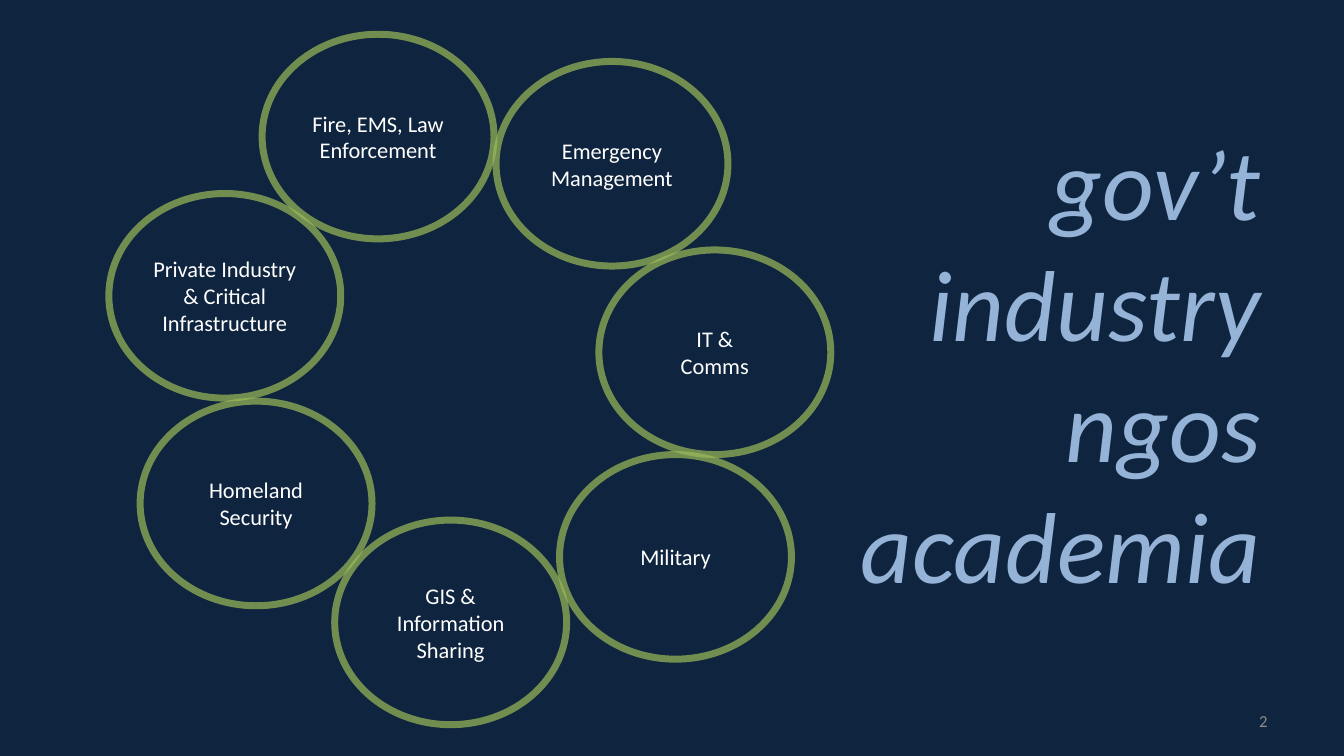
from dataclasses import dataclass

import pptx
import pptx.dml.color
import pptx.enum.shapes
import pptx.enum.text
import pptx.oxml
import pptx.oxml.ns
import pptx.util

Inches = pptx.util.Inches
ALIGN = pptx.enum.text.PP_ALIGN
ANCHOR = pptx.enum.text.MSO_ANCHOR


@dataclass(frozen=True)
class Theme:
    font: str = "Calibri"
    background: str = "0F243E"
    ring: str = "9BBB59"
    label: str = "FFFFFF"
    accent: str = "95B3D7"
    muted: str = "8C8C8C"
    label_size: int = 16
    accent_size: int = 72
    number_size: int = 12
    ring_width: int = 5
    ring_opacity: int = 70


class SlideBuilder:
    """Draws themed elements on one slide."""

    def __init__(self, prs, theme):
        self.theme = theme
        self.s = prs.slides.add_slide(prs.slide_layouts[6])
        fill = self.s.background.fill
        fill.solid()
        fill.fore_color.rgb = self.rgb(theme.background)

    def rgb(self, color):
        return pptx.dml.color.RGBColor.from_string(color)

    def set_text(self, sp, lines, size, color, align, anchor, italic=None):
        tf = sp.text_frame
        tf.word_wrap = True
        tf.vertical_anchor = anchor
        tf.text = "\n".join(lines)
        for p in tf.paragraphs:
            p.alignment = align
            p.font.name = self.theme.font
            p.font.size = pptx.util.Pt(size)
            p.font.color.rgb = self.rgb(color)
            p.font.italic = italic

    def text(self, box, lines, size, color, anchor, italic=None):
        sp = self.s.shapes.add_textbox(*map(Inches, box))
        self.set_text(sp, lines, size, color, ALIGN.RIGHT, anchor, italic)

    def ring(self, left, top, width, height, lines):
        theme = self.theme
        sp = self.s.shapes.add_shape(
            pptx.enum.shapes.MSO_SHAPE.OVAL, *map(Inches, (left, top, width, height)))
        sp.shadow.inherit = False
        sp.fill.background()
        sp.line.width = pptx.util.Pt(theme.ring_width)
        sp.line.color.rgb = self.rgb(theme.ring)
        color = sp.element.spPr.find(".//" + pptx.oxml.ns.qn("a:srgbClr"))
        alpha = pptx.oxml.parse_xml(
            f'<a:alpha {pptx.oxml.ns.nsdecls("a")} val="{theme.ring_opacity * 1000}"/>')
        color.append(alpha)
        self.set_text(sp, lines, theme.label_size, theme.label, ALIGN.CENTER, ANCHOR.MIDDLE)


RING_SIZE = (2.3, 2.03)
PARTNERS = [
    (2.6, 0.34, ["Fire, EMS, Law Enforcement"]),
    (4.92, 0.61, ["Emergency Management"]),
    (3.32, 5.16, ["GIS & Information Sharing"]),
    (5.94, 2.48, ["IT &", "Comms"]),
    (5.55, 4.51, ["Military"]),
    (1.39, 3.98, ["Homeland Security"]),
    (1.08, 1.92, ["Private Industry & Critical Infrastructure"]),
]
SECTORS = ["gov’t", "industry", "ngos", "academia"]


def main():
    prs = pptx.Presentation()
    prs.slide_width, prs.slide_height = Inches(13.33), Inches(7.5)
    theme = Theme()
    slide = SlideBuilder(prs, theme)
    slide.text((9.56, 6.95, 3.11, 0.4), ["2"], theme.number_size, theme.muted, ANCHOR.MIDDLE)
    for left, top, lines in PARTNERS:
        slide.ring(left, top, *RING_SIZE, lines)
    slide.text((6.43, 1.14, 6.17, 4.95), SECTORS, theme.accent_size, theme.accent,
               ANCHOR.TOP, italic=True)
    prs.save("out.pptx")


if __name__ == "__main__":
    main()
